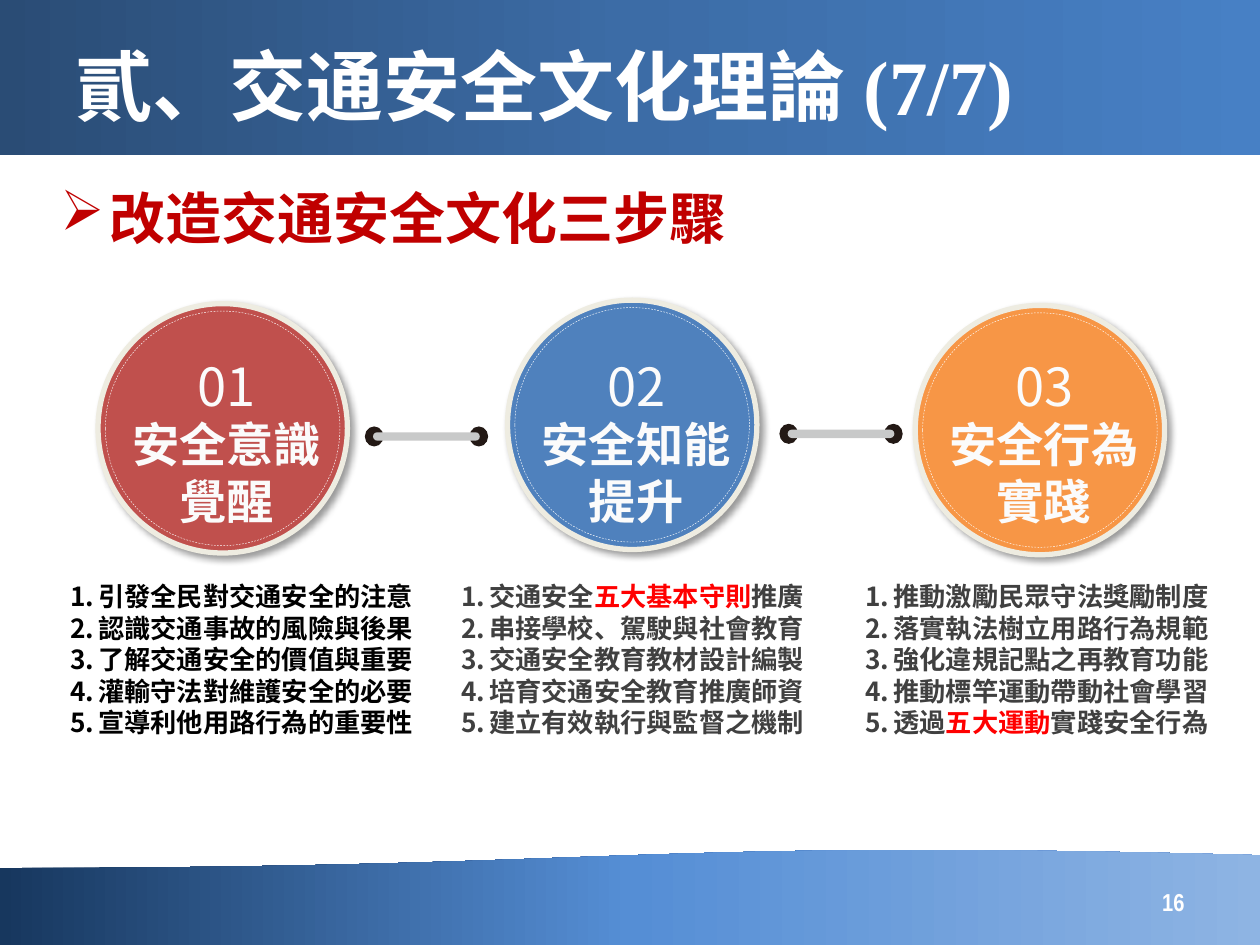
from lxml import etree
from pptx import Presentation
from pptx.dml.color import RGBColor
from pptx.enum import dml, shapes, text
from pptx.oxml import ns
from pptx.util import Pt

# Content
TITLE = "貳、交通安全文化理論 (7/7)"
HEADING = "改造交通安全文化三步驟"
PAGE_NUMBER = "16"
# Each action is a list of pieces; a piece in a tuple is highlighted.
STEPS = [
    dict(number="01", name=["安全意識", "覺醒"], fill="C0504D", ink="000000",
         circle=(56, 173.5), list_left=33, actions=[
             ["引發全民對交通安全的注意"], ["認識交通事故的風險與後果"],
             ["了解交通安全的價值與重要"], ["灌輸守法對維護安全的必要"],
             ["宣導利他用路行為的重要性"]]),
    dict(number="02", name=["安全知能", "提升"], fill="4F81BD", ink="404040",
         circle=(290, 171.5), list_left=256.5, actions=[
             ["交通安全", ("五大基本守則",), "推廣"], ["串接學校、駕駛與社會教育"],
             ["交通安全教育教材設計編製"], ["培育交通安全教育推廣師資"],
             ["建立有效執行與監督之機制"]]),
    dict(number="03", name=["安全行為", "實踐"], fill="F79646", ink="404040",
         circle=(523, 174.5), list_left=487.5, actions=[
             ["推動激勵民眾守法獎勵制度"], ["落實執法樹立用路行為規範"],
             ["強化違規記點之再教育功能"], ["推動標竿運動帶動社會學習"],
             ["透過", ("五大運動",), "實踐安全行為"]]),
]
LINKS = [(208.8, 244), (445.7, 242.5)]

THEME = dict(
    serif="Times New Roman", sans="Noto Sans CJK SC", narrow="Arial Narrow",
    title=44, heading=32, number=30, name=27, action=15, page=14,
    white="FFFFFF", label="FBFBFB", heading_ink="C00000", highlight="FF0000",
    rim="EEECE1", stitch="FEFEFE", dot="231915", bar="C8C9C9",
    header=["2A4C75", "3C6CA6", "4780C5"],
    footer=["17375E", "558ED5", "8EB4E3"],
)
WIDTH, HEIGHT = 720, 540
DISC, STITCH = 142.5, 134
DOT, DOT_GAP = (10, 10.8), 59.8
BAR = (61, 4.8)
LIST_WIDTH, LIST_TOP = 213, 328.3
CENTER, LEFT = text.PP_ALIGN.CENTER, text.PP_ALIGN.LEFT


def rgb(value):
    return RGBColor.from_string(value)


def add_part(parent, kind, left, top, width, height, fill=None, line=None, weight=1):
    part = parent.add_shape(kind, Pt(left), Pt(top), Pt(width), Pt(height))
    part.shadow.inherit = False
    if fill:
        part.fill.solid()
        part.fill.fore_color.rgb = rgb(fill)
    else:
        part.fill.background()
    if line:
        part.line.color.rgb = rgb(line)
        part.line.width = Pt(weight)
    else:
        part.line.fill.background()
    return part


def set_gradient(part, colors, degrees):
    props = part.fill._xPr
    props.remove(props.find(ns.qn("a:noFill")))
    gradient = etree.Element(ns.qn("a:gradFill"), rotWithShape="1")
    stops = etree.SubElement(gradient, ns.qn("a:gsLst"))
    for i, color in enumerate(colors):
        stop = etree.SubElement(stops, ns.qn("a:gs"), pos=str(i * 50000))
        etree.SubElement(stop, ns.qn("a:srgbClr"), val=color)
    etree.SubElement(gradient, ns.qn("a:lin"), ang=str(degrees * 60000), scaled="0")
    props.find(ns.qn("a:prstGeom")).addnext(gradient)


def set_shadow(part):
    effects = part._element.spPr.find(ns.qn("a:effectLst"))
    shadow = etree.SubElement(effects, ns.qn("a:outerShdw"), blurRad=str(Pt(4)),
                              dist=str(Pt(3)), dir="2700000", algn="tl", rotWithShape="0")
    color = etree.SubElement(shadow, ns.qn("a:srgbClr"), val="000000")
    etree.SubElement(color, ns.qn("a:alpha"), val="40000")


def set_bullet(paragraph, tag, margin, hanging, **attributes):
    props = paragraph._p.get_or_add_pPr()
    props.set("marL", str(Pt(margin)))
    props.set("indent", str(-Pt(hanging)))
    etree.SubElement(props, ns.qn(tag), **attributes)


def style(paragraph, face, size, color, bold=True, align=LEFT):
    paragraph.alignment = align
    font = paragraph.font
    font.name, font.size, font.bold = face, Pt(size), bold
    font.color.rgb = rgb(color)
    east_asian = etree.Element(ns.qn("a:ea"), typeface=THEME["sans"])
    font._element.find(ns.qn("a:latin")).addnext(east_asian)


def add_text(parent, left, top, width, height, lines, wrap=True):
    frame = parent.add_textbox(Pt(left), Pt(top), Pt(width), Pt(height)).text_frame
    frame.word_wrap = wrap
    frame.text = "\n".join(lines)
    return frame


def add_step(slide, step):
    group = slide.shapes.add_group_shape().shapes
    left, top = step["circle"]
    inset = (DISC - STITCH) / 2
    oval = shapes.MSO_SHAPE.OVAL
    set_shadow(add_part(group, oval, left, top, DISC, DISC, step["fill"], THEME["rim"], 3))
    stitch = add_part(group, oval, left + inset, top + inset, STITCH, STITCH,
                      line=THEME["stitch"], weight=0.25)
    stitch.line.dash_style = dml.MSO_LINE.DASH
    name = add_text(group, left + 11.5, 234, 124, 73, step["name"], wrap=False)
    for paragraph in name.paragraphs:
        style(paragraph, THEME["sans"], THEME["name"], THEME["label"], align=CENTER)
    number = add_text(group, left + 50, 198.5, 50.4, 44, [step["number"]], wrap=False)
    style(number.paragraphs[0], THEME["sans"], THEME["number"], THEME["label"], bold=False)


def add_actions(slide, step):
    frame = add_text(slide.shapes, step["list_left"], LIST_TOP, LIST_WIDTH, 98, [])
    for i, pieces in enumerate(step["actions"]):
        paragraph = frame.add_paragraph() if i else frame.paragraphs[0]
        set_bullet(paragraph, "a:buAutoNum", 16, 16, type="arabicPeriod")
        style(paragraph, THEME["sans"], THEME["action"], step["ink"],
              align=text.PP_ALIGN.JUSTIFY)
        for piece in pieces:
            run = paragraph.add_run()
            run.text = "".join(piece)
            if isinstance(piece, tuple):
                run.font.color.rgb = rgb(THEME["highlight"])


def add_link(slide, left, top):
    group = slide.shapes.add_group_shape().shapes
    for x in (left, left + DOT_GAP):
        add_part(group, shapes.MSO_SHAPE.OVAL, x, top, *DOT, THEME["dot"], THEME["dot"], 0.63)
    bar_left = left + (DOT_GAP + DOT[0] - BAR[0]) / 2
    bar = add_part(group, shapes.MSO_SHAPE.ROUNDED_RECTANGLE, bar_left,
                   top + (DOT[1] - BAR[1]) / 2, *BAR, THEME["bar"])
    bar.adjustments[0] = 0.5


def main():
    deck = Presentation()
    deck.slide_width, deck.slide_height = Pt(WIDTH), Pt(HEIGHT)
    slide = deck.slides.add_slide(deck.slide_layouts[5])

    # Bands behind the title
    footer = add_part(slide.shapes, shapes.MSO_SHAPE.FLOWCHART_DOCUMENT, 0, 485, WIDTH, 55.5)
    footer.rotation = 180
    set_gradient(footer, THEME["footer"], 180)
    header = add_part(slide.shapes, shapes.MSO_SHAPE.RECTANGLE, 0, 0, WIDTH, 88.5)
    set_gradient(header, THEME["header"], 0)
    for band in (header, footer):
        slide.shapes._spTree.insert(2, band._element)

    # Title, heading and page number
    title = slide.shapes.title
    title.left, title.top, title.width, title.height = Pt(36), Pt(15), Pt(648), Pt(67)
    title.text_frame.text = TITLE
    title.text_frame.vertical_anchor = text.MSO_ANCHOR.MIDDLE
    style(title.text_frame.paragraphs[0], THEME["serif"], THEME["title"], THEME["white"])

    heading = add_text(slide.shapes, 20, 101.5, 682, 60, [HEADING]).paragraphs[0]
    set_bullet(heading, "a:buChar", 35.4, 28, char="➢")
    style(heading, THEME["serif"], THEME["heading"], THEME["heading_ink"])

    page = add_text(slide.shapes, 516, 500.5, 168, 29, [PAGE_NUMBER])
    page.vertical_anchor = text.MSO_ANCHOR.MIDDLE
    style(page.paragraphs[0], THEME["narrow"], THEME["page"], THEME["white"],
          align=text.PP_ALIGN.RIGHT)

    # Steps, links between them and their action lists
    for step in STEPS:
        add_step(slide, step)
    for left, top in LINKS:
        add_link(slide, left, top)
    for step in STEPS:
        add_actions(slide, step)

    deck.save("out.pptx")


if __name__ == "__main__":
    main()
